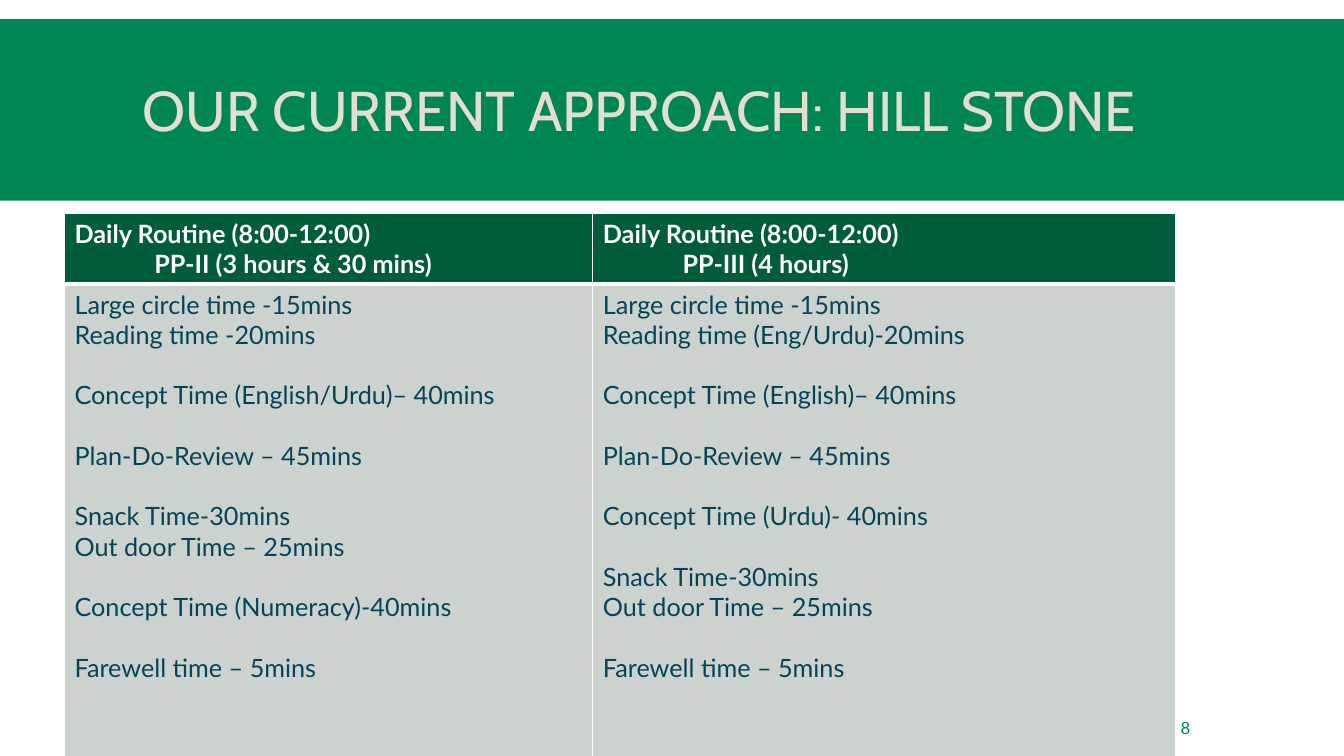
"""Build a slide that compares the daily routines of two pre-primary classes."""
from lxml import etree
from pptx import Presentation
from pptx.dml.color import RGBColor
from pptx.enum.shapes import MSO_SHAPE
from pptx.enum.text import MSO_ANCHOR, PP_ALIGN
from pptx.oxml.ns import qn
from pptx.util import Inches, Pt

RECTANGLE = MSO_SHAPE.RECTANGLE
MIDDLE = MSO_ANCHOR.MIDDLE
LEFT = PP_ALIGN.LEFT

GREEN, DARK_GREEN, GREY = "008652", "005C39", "CCD2CE"
WHITE, CREAM, NAVY = "FFFFFF", "E3DED1", "044458"
LINE_GAP = 21.6
SUBTITLE_INDENT = 0.79


def paint(fill, colour):
    fill.solid()
    fill.fore_color.rgb = RGBColor.from_string(colour)


def write(frame, blocks, size, colour, font="Lato", bold=False, gap=0, indent=0, spacing=None):
    """Write blocks of lines, with a gap before each block and an indent on its later lines."""
    frame.word_wrap = True
    lines = [(number, place, text) for number, block in enumerate(blocks)
             for place, text in enumerate(block)]
    for index, (number, place, text) in enumerate(lines):
        paragraph = frame.add_paragraph() if index else frame.paragraphs[0]
        paragraph.alignment = LEFT
        paragraph.line_spacing = spacing
        paragraph.space_before = Pt(gap if number and not place else 0)
        if place and indent:
            paragraph._p.get_or_add_pPr().set("marL", str(Inches(indent)))
        run = paragraph.add_run()
        run.text = text
        run.font.size, run.font.name, run.font.bold = Pt(size), font, bold
        paint(run.font.fill, colour)


presentation = Presentation()
presentation.slide_width, presentation.slide_height = Inches(13.33), Inches(7.5)
slide = presentation.slides.add_slide(presentation.slide_layouts[6])
paint(slide.background.fill, WHITE)

banner = slide.shapes.add_shape(
    RECTANGLE, 0, Inches(0.19), presentation.slide_width, Inches(1.8))
banner.shadow.inherit = False
paint(banner.fill, GREEN)
banner.line.fill.background()

title = slide.shapes.add_textbox(Inches(1.32), Inches(0.31), Inches(10.7), Inches(1.65)).text_frame
title.vertical_anchor = MIDDLE
write(title, [["OUR CURRENT APPROACH: HILL STONE"]], 40, CREAM, font="Cabin", spacing=0.85)

routines = [
    (5.24,
     ["Daily Routine (8:00-12:00)", "PP-II (3 hours & 30 mins)"],
     [["Large circle time -15mins", "Reading time -20mins"],
      ["Concept Time (English/Urdu)– 40mins"],
      ["Plan-Do-Review – 45mins"],
      ["Snack Time-30mins", "Out door Time – 25mins"],
      ["Concept Time (Numeracy)-40mins"],
      ["Farewell time – 5mins"]]),
    (5.78,
     ["Daily Routine (8:00-12:00)", "PP-III (4 hours)"],
     [["Large circle time -15mins", "Reading time (Eng/Urdu)-20mins"],
      ["Concept Time (English)– 40mins"],
      ["Plan-Do-Review – 45mins"],
      ["Concept Time (Urdu)- 40mins"],
      ["Snack Time-30mins", "Out door Time – 25mins"],
      ["Farewell time – 5mins"]]),
]
header_height, body_height = 0.67, 4.72
timetable = slide.shapes.add_table(
    2, len(routines), Inches(0.64), Inches(2.12),
    Inches(sum(width for width, _, _ in routines)), Inches(header_height + body_height)).table
timetable.first_row = timetable.horz_banding = False
timetable.rows[0].height, timetable.rows[1].height = Inches(header_height), Inches(body_height)

for column, (width, heading, activities) in enumerate(routines):
    timetable.columns[column].width = Inches(width)
    header, body = timetable.cell(0, column), timetable.cell(1, column)
    write(header.text_frame, [heading], 18, WHITE, bold=True, indent=SUBTITLE_INDENT)
    write(body.text_frame, activities, 18, NAVY, gap=LINE_GAP)
    for cell, fill_colour, thick_side in ((header, DARK_GREEN, "lnB"), (body, GREY, "lnT")):
        properties = cell._tc.get_or_add_tcPr()
        for side in ("lnL", "lnR", "lnT", "lnB"):
            border = etree.SubElement(properties, qn(f"a:{side}"),
                                      w=str(Pt(3 if side == thick_side else 1)))
            border_fill = etree.SubElement(border, qn("a:solidFill"))
            etree.SubElement(border_fill, qn("a:srgbClr"), val=WHITE)
        paint(cell.fill, fill_colour)

page_number = slide.shapes.add_textbox(
    Inches(11.66), Inches(7.02), Inches(1.03), Inches(0.4)).text_frame
page_number.vertical_anchor = MIDDLE
page_number.margin_left = Inches(0.05)
write(page_number, [["8"]], 12, GREEN)

presentation.save("out.pptx")
